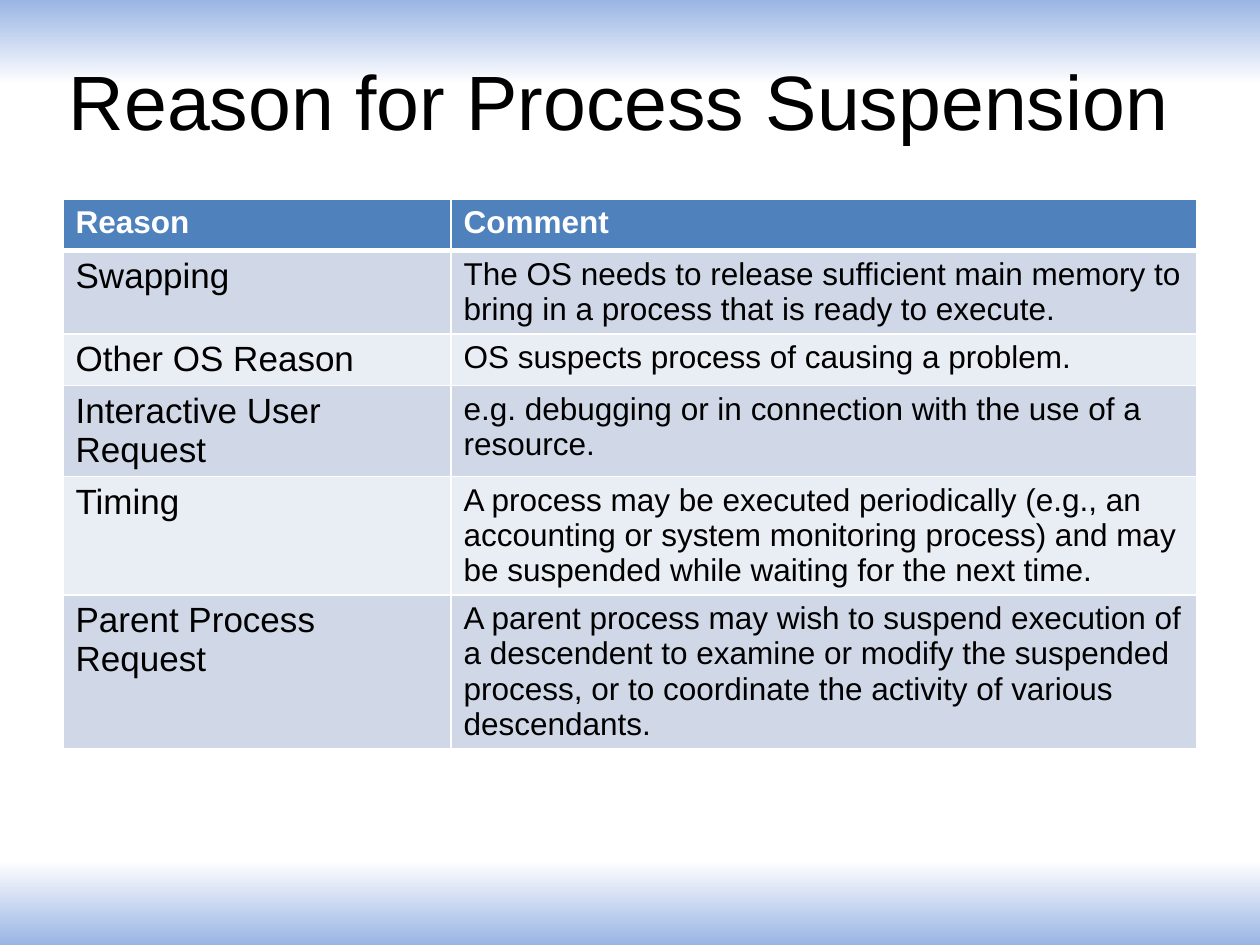
from copy import deepcopy

from pptx import Presentation
from pptx.dml.color import RGBColor as RGB
from pptx.enum.text import MSO_ANCHOR as Anchor, PP_ALIGN as Align
from pptx.oxml.ns import qn
from pptx.oxml.xmlchemy import OxmlElement as Element
from pptx.util import Inches, Pt

COLORS = {
    "edge": "9AB5E4",
    "white": "FFFFFF",
    "black": "000000",
    "head": "4F81BD",
    "dark": "D0D8E8",
    "light": "E9EDF4",
}
ROWS = [
    ("Reason", "Comment"),
    ("Swapping",
     "The OS needs to release sufficient main memory to bring in a process "
     "that is ready to execute."),
    ("Other OS Reason", "OS suspects process of causing a problem."),
    ("Interactive User Request",
     "e.g. debugging or in connection with the use of a resource."),
    ("Timing",
     "A process may be executed periodically (e.g., an accounting or system "
     "monitoring process) and may be suspended while waiting for the next time."),
    ("Parent Process Request",
     "A parent process may wish to suspend execution of a descendent to examine "
     "or modify the suspended process, or to coordinate the activity of various "
     "descendants."),
]


def add_run(par, text, size, color, bold=False):
    run = par.add_run()
    run.text = text
    font = run.font
    font.name, font.size, font.bold = "Arial", Pt(size), bold
    font.color.rgb = RGB.from_string(COLORS[color])


def add_borders(cell, head):
    """Draw white cell edges, with a thick one below the header."""
    props = cell._tc.get_or_add_tcPr()
    widths = {"L": 1, "R": 1, "T": 1, "B": 3 if head else 1}
    for i, (side, width) in enumerate(widths.items()):
        line = Element(f"a:ln{side}")
        line.set("w", str(Pt(width)))
        fill = Element("a:solidFill")
        color = Element("a:srgbClr")
        color.set("val", COLORS["white"])
        fill.append(color)
        line.append(fill)
        props.insert(i, line)


prs = Presentation()
prs.slide_width, prs.slide_height = Inches(10), Inches(7.5)
slide = prs.slides.add_slide(prs.slide_layouts[5])

# Background gradient
fill = slide.background.fill
fill.gradient()
fill.gradient_angle = 90
stops = slide.element.find(f".//{qn('a:gsLst')}")
for _ in range(2):
    stops.append(deepcopy(stops[0]))
bands = [(0, "edge"), (0.09, "white"), (0.91, "white"), (1, "edge")]
for stop, (pos, color) in zip(fill.gradient_stops, bands):
    stop.position = pos
    stop.color.rgb = RGB.from_string(COLORS[color])

# Title
title = slide.shapes.title
title.left, title.top = Inches(0), Inches(0.17)
title.width, title.height = Inches(9.83), Inches(1.25)
frame = title.text_frame
frame.vertical_anchor = Anchor.MIDDLE
par = frame.paragraphs[0]
par.alignment = Align.CENTER
add_run(par, "Reason for Process Suspension", 44, "black")

# Table of reasons
holder = slide.shapes.add_table(
    len(ROWS), 2, Inches(0.5), Inches(1.58), Inches(9), Inches(4.61))
table = holder.table
for col, width in zip(table.columns, (3.08, 5.92)):
    col.width = Inches(width)
for r, texts in enumerate(ROWS):
    table.rows[r].height = Inches(0.41)
    head = r == 0
    shade = "head" if head else "dark" if r % 2 else "light"
    for c, text in enumerate(texts):
        cell = table.cell(r, c)
        cell.fill.solid()
        cell.fill.fore_color.rgb = RGB.from_string(COLORS[shade])
        add_borders(cell, head)
        size = 20 if c == 0 and not head else 18
        add_run(cell.text_frame.paragraphs[0], text, size,
                "white" if head else "black", head)
holder.height = Inches(4.61)

prs.save("out.pptx")
